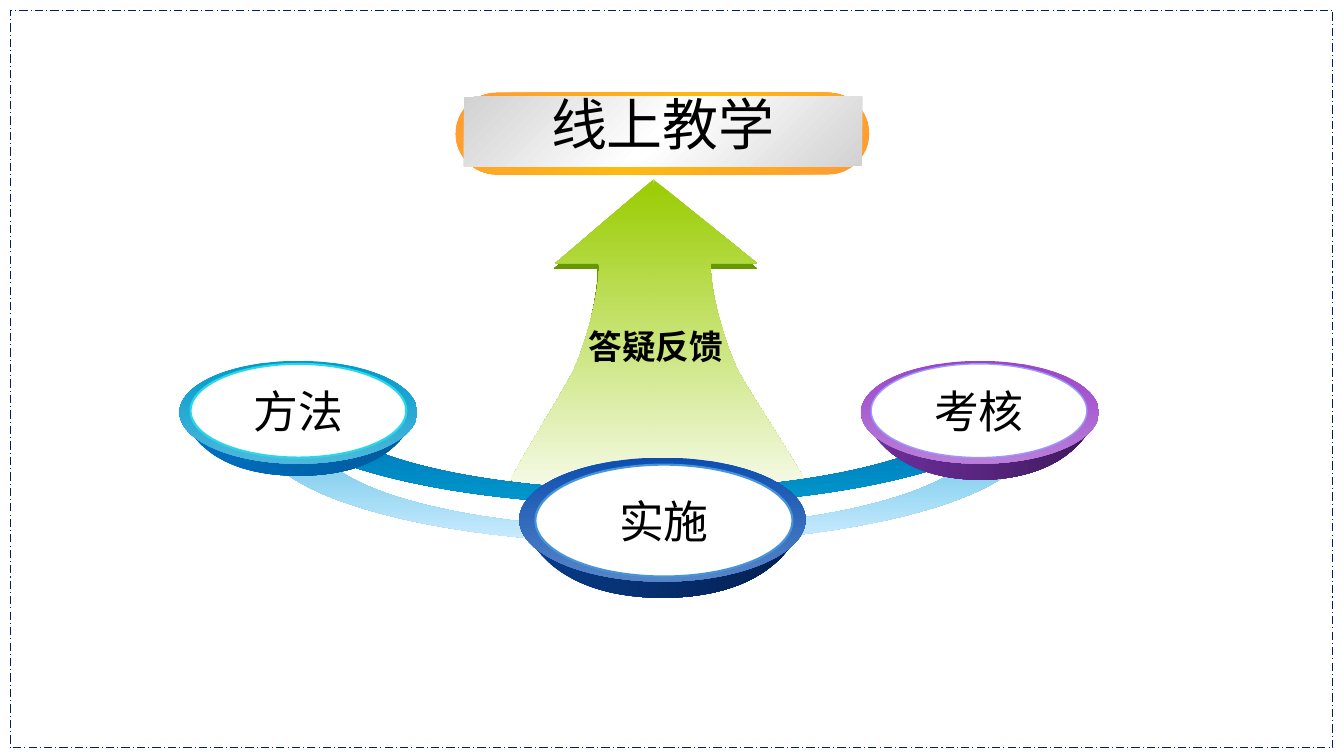
from lxml.etree import SubElement
from pptx import Presentation
from pptx.dml.color import RGBColor
from pptx.enum.dml import MSO_LINE
from pptx.enum.shapes import MSO_SHAPE as Preset
from pptx.enum.text import MSO_ANCHOR as Anchor, PP_ALIGN as Align
from pptx.oxml.ns import qn
from pptx.util import Inches, Pt

COLUMNS, ROWS = 13.33, 7.5
SLIDE_WIDTH, SLIDE_HEIGHT = Inches(COLUMNS), Inches(ROWS)
FONT = "Noto Sans CJK SC"

DISCS = [
    {"text": "实施", "box": (5.15, 4.54, 2.84, 1.23), "face": (5.31, 4.61, 2.55, 1.11),
     "rim": ["0C4EB0", "5684C8"], "side": ["083C8A", "041F50"],
     "edge": "4694DA", "edge_width": 1.5, "depth": 0.16},
    {"text": "考核", "box": (8.54, 3.58, 2.36, 1.02), "face": (8.64, 3.61, 2.14, 0.93),
     "rim": ["9A45C9", "B97EDA"], "side": ["7030A0", "3F1A5C"],
     "edge": "9999FF", "edge_width": 1, "depth": 0.16},
    {"text": "方法", "box": (1.78, 3.58, 2.36, 1.02), "face": (1.89, 3.61, 2.14, 0.93),
     "rim": ["0099CC", "4EB8DC"], "side": ["0070C0", "005A9E"],
     "edge": "28D8E6", "edge_width": 1.5, "depth": 0.12},
]

ARROW_AXIS = 6.48
ARROW_HALF = [(6.48, 1.78), (6.48, 5.16), (6.48, 5.16, 5.22, 5.06, 5.07, 4.75),
              (5.25, 4.41, 5.49, 4.04, 5.67, 3.71),
              (5.84, 3.37, 5.96, 2.79, 5.94, 2.61), (5.51, 2.61)]
BAND = [(3.14, 3.83), (3.12, 3.87, 3.12, 3.91, 3.12, 3.94),
        (3.12, 4.45, 4.59, 4.86, 6.42, 4.86), (8.24, 4.86, 9.72, 4.45, 9.72, 3.94),
        (9.72, 3.91, 9.72, 3.87, 9.7, 3.83), (10.22, 3.82),
        (10.24, 3.86, 10.25, 3.9, 10.25, 3.94), (10.25, 4.53, 8.54, 5.01, 6.42, 5.01),
        (4.3, 5.01, 2.59, 4.53, 2.59, 3.94), (2.59, 3.9, 2.6, 3.86, 2.62, 3.82)]


def across(columns):
    return round(SLIDE_WIDTH * columns / COLUMNS)


def down(rows):
    return round(SLIDE_HEIGHT * rows / ROWS)


def place(box):
    left, top, width, height = box
    return across(left), down(top), across(width), down(height)


def color(hex_value):
    return RGBColor.from_string(hex_value)


def set_attributes(target, values):
    for name, value in values.items():
        setattr(target, name, value)


def fill_gradient(shape, colors, angle):
    shape.fill.gradient()
    shape.fill.gradient_angle = (360 - angle) % 360
    stops = shape._element.spPr.find(qn("a:gradFill")).find(qn("a:gsLst"))
    for stop in list(stops):
        stops.remove(stop)
    for index, hex_value in enumerate(colors):
        position = 100000 * index // (len(colors) - 1)
        stop = SubElement(stops, qn("a:gs"), pos=str(position))
        SubElement(stop, qn("a:srgbClr"), val=hex_value)


def style_shape(shape, fill=None, line=None, line_width=1, angle=90):
    if isinstance(fill, list):
        fill_gradient(shape, fill, angle)
    elif fill:
        shape.fill.solid()
        shape.fill.fore_color.rgb = color(fill)
    else:
        shape.fill.background()
    if line:
        shape.line.color.rgb = color(line)
        shape.line.width = Pt(line_width)
    else:
        shape.line.fill.background()
    shape.shadow.inherit = False
    return shape


def add_preset(slide, preset, box, **style):
    return style_shape(slide.shapes.add_shape(preset, *place(box)), **style)


def write_text(shape, text, size, bold=False, spacing=None):
    frame = shape.text_frame
    set_attributes(frame, {"word_wrap": False, "vertical_anchor": Anchor.MIDDLE})
    paragraph = frame.paragraphs[0]
    set_attributes(paragraph, {"alignment": Align.CENTER, "line_spacing": spacing})
    run = paragraph.add_run()
    run.text = text
    set_attributes(run.font, {"size": Pt(size), "bold": bold, "name": FONT})
    run.font.color.rgb = color("000000")
    SubElement(run._r.get_or_add_rPr(), qn("a:ea"), typeface=FONT)


def pairs(segment):
    return list(zip(segment[::2], segment[1::2]))


def transform(segments, move):
    return [tuple(value for x, y in pairs(segment) for value in move(x, y))
            for segment in segments]


def add_outline(slide, segments, **style):
    corners = [(across(x), down(y)) for segment in segments for x, y in pairs(segment)]
    builder = slide.shapes.build_freeform(*corners[0])
    builder.add_line_segments(corners[1:], close=True)
    shape = builder.convert_to_shape()
    outline = next(shape._element.iter(qn("a:path")))
    lines = iter(outline.findall(qn("a:lnTo")))
    for segment in segments[1:]:
        parts = [next(lines) for _ in pairs(segment)]
        if len(parts) == 3:
            curve = SubElement(outline, qn("a:cubicBezTo"))
            parts[0].addprevious(curve)
            for part in parts:
                curve.append(part[0])
                outline.remove(part)
    return style_shape(shape, **style)


def add_drop_shadow(shape, hex_value, distance, angle):
    effects = shape._element.spPr.find(qn("a:effectLst"))
    shadow = SubElement(effects, qn("a:outerShdw"), dist=str(Pt(distance)),
                        dir=str(angle * 60000), algn="ctr", rotWithShape="0")
    SubElement(shadow, qn("a:srgbClr"), val=hex_value)


def add_arrow(slide):
    right = transform(ARROW_HALF, lambda x, y: (ARROW_AXIS + (ARROW_AXIS - x) * 1.06, y))
    for half, angle in ((ARROW_HALF, 104), (right, 90)):
        shape = add_outline(slide, half, fill=["99CC00", "FFFFFF"])
        add_drop_shadow(shape, "669900", 4, angle)


def add_band(slide, offset, colors):
    add_outline(slide, transform(BAND, lambda x, y: (x, y + offset)), fill=colors)


def add_side(slide, disc):
    left, top, width, height = disc["box"]
    base = 1 + disc["depth"] / height
    bowl = [(0.01, 0.53), (0.08, 0.95, 0.27, base, 0.5, base),
            (0.73, base, 0.92, 0.95, 0.99, 0.53)]
    segments = transform(bowl, lambda x, y: (left + width * x, top + height * y))
    add_outline(slide, segments, fill=disc["side"], angle=0)


def add_face(slide, disc):
    face = add_preset(slide, Preset.OVAL, disc["face"], fill="FFFFFF",
                      line=disc["edge"], line_width=disc["edge_width"])
    write_text(face, disc["text"], 32)


def add_title(slide):
    border = add_preset(slide, Preset.ROUNDED_RECTANGLE, (4.52, 0.92, 4.1, 0.81),
                        fill=["FF9933", "FDBA10", "FF9933"], angle=45)
    border.adjustments[0] = 0.5
    title = slide.shapes.title
    left, top, width, height = place((4.6, 0.96, 3.95, 0.69))
    set_attributes(title, {"left": left, "top": top, "width": width, "height": height})
    geometry = SubElement(title._element.spPr, qn("a:prstGeom"), prst="roundRect")
    guides = SubElement(geometry, qn("a:avLst"))
    SubElement(guides, qn("a:gd"), name="adj", fmla="val 50000")
    style_shape(title, fill=["D2D2D2", "FFFFFF", "D2D2D2"], angle=45)
    write_text(title, "线上教学", 40, spacing=0.7)
    slide.shapes._spTree.append(title._element)


def add_frame(slide):
    frame = add_preset(slide, Preset.RECTANGLE, (0.1, 0.1, 13.12, 7.32),
                       line="002060", line_width=0.75)
    frame.line.dash_style = MSO_LINE.LONG_DASH_DOT
    slide.slide_layout.shapes._spTree.append(frame._element)


def main():
    presentation = Presentation()
    set_attributes(presentation, {"slide_width": SLIDE_WIDTH, "slide_height": SLIDE_HEIGHT})
    slide = presentation.slides.add_slide(presentation.slide_layouts[5])
    add_frame(slide)
    add_arrow(slide)
    add_band(slide, 0, ["0060B0", "0099CC"])
    add_band(slide, 0.38, ["5ABEE3", "CCECFF"])
    for disc in DISCS:
        add_side(slide, disc)
        add_preset(slide, Preset.OVAL, disc["box"], fill=disc["rim"])
    add_title(slide)
    for disc in DISCS:
        add_face(slide, disc)
    label = slide.shapes.add_textbox(*place((5.73, 3.18, 1.55, 0.5)))
    write_text(label, "答疑反馈", 24, bold=True)
    presentation.save("out.pptx")


if __name__ == "__main__":
    main()
